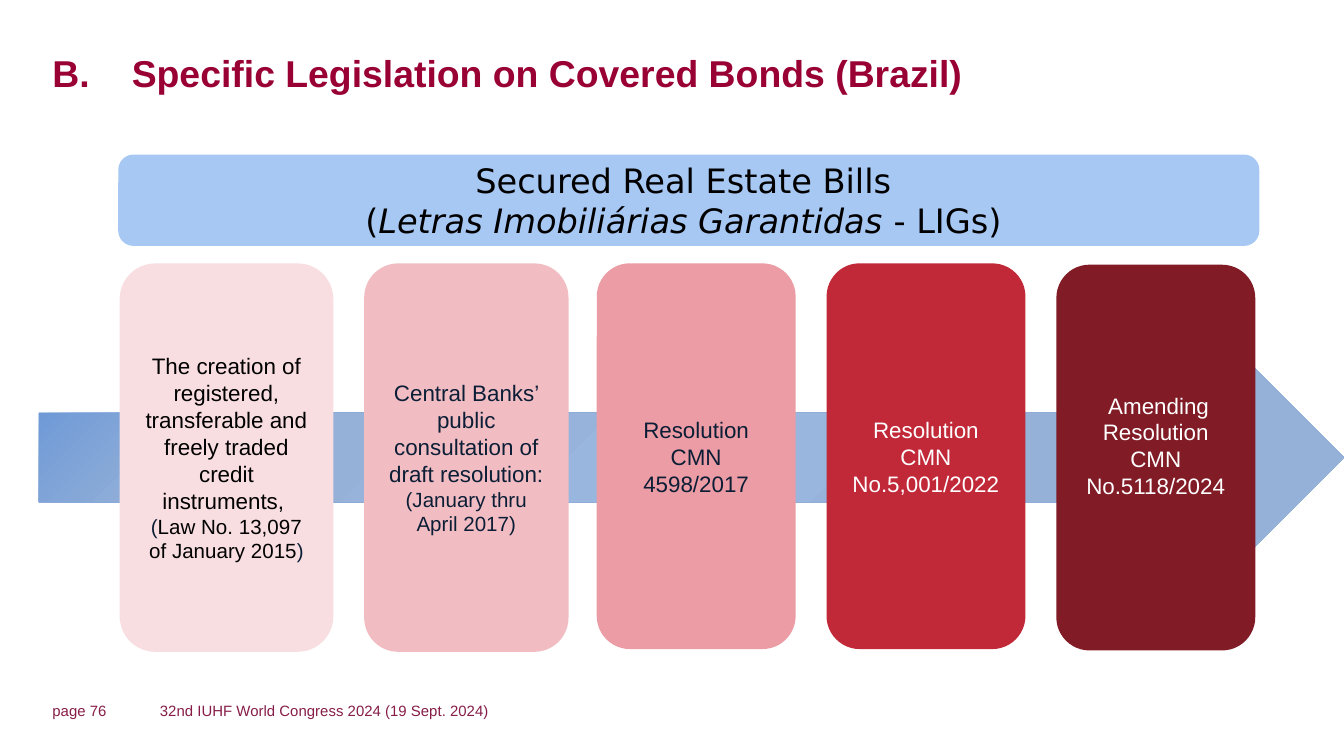
from pptx import Presentation
from pptx.dml.color import RGBColor
from pptx.enum.shapes import MSO_SHAPE
from pptx.enum.text import MSO_ANCHOR, PP_ALIGN
from pptx.oxml import parse_xml
from pptx.util import Inches, Pt

BLACK = RGBColor(0x00, 0x00, 0x00)
WHITE = RGBColor(0xFF, 0xFF, 0xFF)
NAVY = RGBColor(0x0C, 0x1E, 0x36)
CRIMSON = RGBColor(0x99, 0x00, 0x33)
PLUM = RGBColor(0x86, 0x1D, 0x48)
SKY = RGBColor(0xA8, 0xC8, 0xF4)
BLUSH = RGBColor(0xF8, 0xDE, 0xE1)
PINK = RGBColor(0xF1, 0xBD, 0xC3)
ROSE = RGBColor(0xEB, 0x9C, 0xA4)
RED = RGBColor(0xC1, 0x28, 0x38)
MAROON = RGBColor(0x81, 0x1B, 0x26)

ARROW_STOPS = [(25, "95B1D8"), (46, "99B6DE"), (83, "95B1D8"), (100, "6795D6")]

# left, top, width, height, fill, bottom inset, paragraphs of (text, size, colour)
CARDS = [
    (0.89, 1.96, 1.59, 2.89, BLUSH, 0.05, [
        [("The creation of registered, transferable and freely traded credit "
          "instruments, ", 12, BLACK)],
        [("(", 11, NAVY), ("Law No. 13,097 of January 2015", 11, BLACK),
         (")", 11, NAVY)]]),
    (2.71, 1.96, 1.52, 2.89, PINK, 0.05, [
        [("Central Banks’ public consultation of draft resolution:", 12, NAVY)],
        [("(January thru April 2017)", 11, NAVY)]]),
    (4.44, 1.96, 1.48, 2.87, ROSE, 0.05, [
        [("Resolution CMN 4598/2017", 12, NAVY)]]),
    (6.15, 1.96, 1.48, 2.87, RED, 0.05, [
        [("Resolution CMN No.5,001/2022", 12, WHITE)]]),
    (7.86, 1.97, 1.48, 2.87, MAROON, 0.23, [
        [(" ", 11, WHITE), ("Amending Resolution CMN No.5118/2024", 12, WHITE)]]),
]


def add_run(p, text, size, color, font="Arial", bold=False, italic=False):
    r = p.add_run()
    r.text = text
    r.font.name = font
    r.font.size = Pt(size)
    r.font.color.rgb = color
    r.font.bold = bold
    r.font.italic = italic


def add_plain_shape(s, kind, left, top, width, height):
    sp = s.shapes.add_shape(kind, Inches(left), Inches(top), Inches(width), Inches(height))
    sp.shadow.inherit = False
    sp.line.fill.background()
    return sp


def add_arrow(s):
    """Timeline arrow with a radial gradient centred on its bottom right corner."""
    sp = add_plain_shape(s, MSO_SHAPE.RIGHT_ARROW, 0.29, 2.74, 9.71, 1.33)
    sp.fill.background()
    stops = "".join(f'<a:gs pos="{pos * 1000}"><a:srgbClr val="{color}"/></a:gs>'
                    for pos, color in ARROW_STOPS)
    gradient = parse_xml(
        '<a:gradFill xmlns:a="http://schemas.openxmlformats.org/drawingml/2006/main" '
        f'rotWithShape="1"><a:gsLst>{stops}</a:gsLst><a:path path="circle">'
        '<a:fillToRect l="100000" t="100000"/></a:path></a:gradFill>')
    spPr = sp.element.spPr
    no_fill = spPr.find("{http://schemas.openxmlformats.org/drawingml/2006/main}noFill")
    spPr.replace(no_fill, gradient)


def add_box(s, left, top, width, height, fill, paragraphs, bottom=0.05, font="Arial"):
    """Rounded box of centred paragraphs, each a list of run arguments."""
    sp = add_plain_shape(s, MSO_SHAPE.ROUNDED_RECTANGLE, left, top, width, height)
    sp.fill.solid()
    sp.fill.fore_color.rgb = fill
    tf = sp.text_frame
    tf.word_wrap = True
    tf.vertical_anchor = MSO_ANCHOR.MIDDLE
    tf.margin_bottom = Inches(bottom)
    for i, runs in enumerate(paragraphs):
        p = tf.add_paragraph() if i else tf.paragraphs[0]
        p.alignment = PP_ALIGN.CENTER
        for text, size, color, *italic in runs:
            add_run(p, text, size, color, font, italic=bool(italic))


def add_label(s, left, top, width, height, text, size, color, bold=False,
              anchor=MSO_ANCHOR.MIDDLE):
    box = s.shapes.add_textbox(Inches(left), Inches(top), Inches(width), Inches(height))
    tf = box.text_frame
    tf.word_wrap = True
    tf.vertical_anchor = anchor
    tf.margin_left = tf.margin_top = tf.margin_right = tf.margin_bottom = 0
    p = tf.paragraphs[0]
    p.alignment = PP_ALIGN.LEFT
    add_run(p, text, size, color, bold=bold)
    return p


def add_title(s):
    p = add_label(s, 0.39, 0.37, 9.22, 0.34,
                  "B. \tSpecific Legislation on Covered Bonds (Brazil)",
                  20, CRIMSON, bold=True, anchor=MSO_ANCHOR.TOP)
    pPr = p._p.get_or_add_pPr()
    pPr.set("marL", str(Inches(0.59)))
    pPr.set("indent", str(Inches(-0.59)))


def main():
    prs = Presentation()
    prs.slide_width = Inches(10)
    prs.slide_height = Inches(10 * 9 / 16)
    s = prs.slides.add_slide(prs.slide_layouts[6])

    add_arrow(s)
    add_label(s, 1.19, 5.22, 4.46, 0.13,
              "32nd IUHF World Congress 2024 (19 Sept. 2024)", 8, PLUM)
    add_label(s, 0.39, 5.22, 0.63, 0.13, "page 76", 8, PLUM)
    add_title(s)
    add_box(s, 0.88, 1.15, 8.49, 0.68, SKY, [
        [("Secured Real Estate Bills ", 18, BLACK)],
        [("(", 18, BLACK), ("Letras Imobiliárias Garantidas", 18, BLACK, True),
         (" - LIGs) ", 18, BLACK)]], font="DejaVu Sans")
    for left, top, width, height, fill, bottom, paragraphs in CARDS:
        add_box(s, left, top, width, height, fill, paragraphs, bottom)

    prs.save("out.pptx")


if __name__ == "__main__":
    main()
